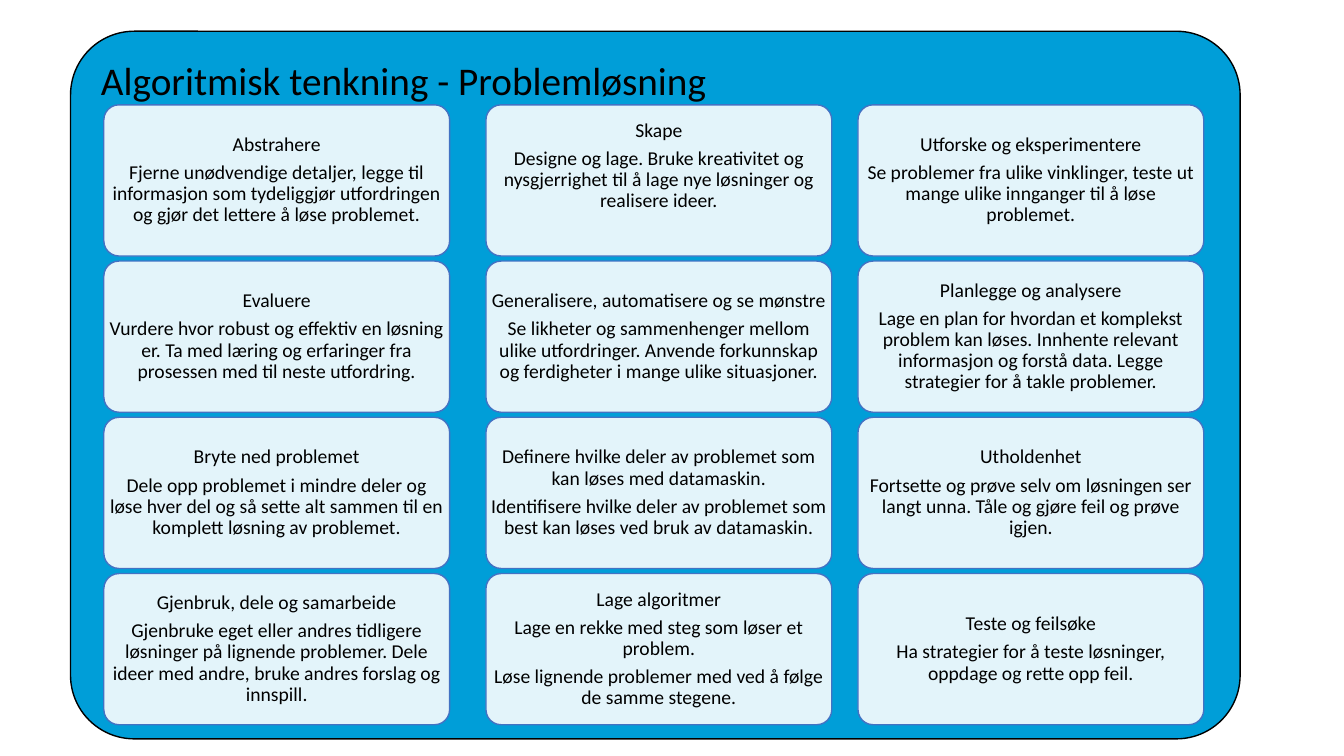
import pptx
import pptx.util
import pptx.dml.color
import pptx.enum.shapes
import pptx.enum.text
import lxml.etree

TITLE = "Algoritmisk tenkning - Problemløsning"
COLUMNS = [
    [
        ["Abstrahere",
         "Fjerne unødvendige detaljer, legge til informasjon som tydeliggjør utfordringen og gjør det lettere å løse problemet."],
        ["Evaluere",
         "Vurdere hvor robust og effektiv en løsning er. Ta med læring og erfaringer fra prosessen med til neste utfordring."],
        ["Bryte ned problemet",
         "Dele opp problemet i mindre deler og løse hver del og så sette alt sammen til en komplett løsning av problemet."],
        ["Gjenbruk, dele og samarbeide",
         "Gjenbruke eget eller andres tidligere løsninger på lignende problemer. Dele ideer med andre, bruke andres forslag og innspill."],
    ],
    [
        ["Skape",
         "Designe og lage. Bruke kreativitet og nysgjerrighet til å lage nye løsninger og realisere ideer."],
        ["Generalisere, automatisere og se mønstre",
         "Se likheter og sammenhenger mellom ulike utfordringer. Anvende forkunnskap og ferdigheter i mange ulike situasjoner."],
        ["Definere hvilke deler av problemet som kan løses med datamaskin.",
         "Identifisere hvilke deler av problemet som best kan løses ved bruk av datamaskin."],
        ["Lage algoritmer",
         "Lage en rekke med steg som løser et problem.",
         "Løse lignende problemer med ved å følge de samme stegene."],
    ],
    [
        ["Utforske og eksperimentere",
         "Se problemer fra ulike vinklinger, teste ut mange ulike innganger til å løse problemet."],
        ["Planlegge og analysere",
         "Lage en plan for hvordan et komplekst problem kan løses. Innhente relevant informasjon og forstå data. Legge strategier for å takle problemer."],
        ["Utholdenhet",
         "Fortsette og prøve selv om løsningen ser langt unna. Tåle og gjøre feil og prøve igjen."],
        ["Teste og feilsøke",
         "Ha strategier for å teste løsninger, oppdage og rette opp feil."],
    ],
]
EXTRA_BOTTOM = {"Skape": 0.28}

COLORS = {"panel": "009ED8", "card": "FFFFFF", "card_line": "4372C3", "text": "000000"}
FONT = "Calibri"
SLIDE_SIZE = (13.33, 7.5)
PANEL = (0.7, 0.31, 11.6, 7.02)
COLUMN_LEFTS = (1.03, 4.82, 8.51)
FIRST_ROW, ROW_PITCH = 1.04, 1.55
CARD_WIDTH, CARD_HEIGHT = 3.43, 1.5
CORNER_INSET = 0.29

Inches = pptx.util.Inches
Align = pptx.enum.text.PP_ALIGN
Anchor = pptx.enum.text.MSO_ANCHOR


def rgb(name):
    return pptx.dml.color.RGBColor.from_string(COLORS[name])


def add_rounded_box(slide, box, fill, line, corner, opacity=100):
    shape = slide.shapes.add_shape(
        pptx.enum.shapes.MSO_SHAPE.ROUNDED_RECTANGLE, *map(Inches, box))
    shape.shadow.inherit = False
    shape.adjustments[0] = corner
    shape.fill.solid()
    shape.fill.fore_color.rgb = rgb(fill)
    shape.line.color.rgb = rgb(line)
    shape.line.width = pptx.util.Pt(1)
    if opacity < 100:
        color = shape._element.spPr.find(pptx.oxml.ns.qn("a:solidFill"))[0]
        alpha = lxml.etree.SubElement(color, pptx.oxml.ns.qn("a:alpha"))
        alpha.set("val", str(opacity * 1000))
    return shape


def write_text(shape, lines, size, insets, align=Align.LEFT, anchor=Anchor.TOP, gap=0):
    frame = shape.text_frame
    frame.word_wrap = True
    frame.vertical_anchor = anchor
    corner = shape.adjustments[0] * shape.height.inches * CORNER_INSET
    left, top, right, bottom = [Inches(inset - corner) for inset in insets]
    frame.margin_left, frame.margin_top = left, top
    frame.margin_right, frame.margin_bottom = right, bottom
    for index, line in enumerate(lines):
        paragraph = frame.add_paragraph() if index else frame.paragraphs[0]
        paragraph.alignment = align
        paragraph.line_spacing = 0.9
        if index:
            paragraph.space_before = pptx.util.Pt(gap)
        run = paragraph.add_run()
        run.text = line
        run.font.name = FONT
        run.font.size = pptx.util.Pt(size)
        run.font.color.rgb = rgb("text")


def main():
    presentation = pptx.Presentation()
    presentation.slide_width, presentation.slide_height = map(Inches, SLIDE_SIZE)
    slide = presentation.slides.add_slide(presentation.slide_layouts[6])

    panel = add_rounded_box(slide, PANEL, "panel", "text", 0.09)
    write_text(panel, [TITLE], 28, (0.3, 0.3, 5.28, 0.3))

    for left, cards in zip(COLUMN_LEFTS, COLUMNS):
        for row, lines in enumerate(cards):
            box = (left, FIRST_ROW + row * ROW_PITCH, CARD_WIDTH, CARD_HEIGHT)
            card = add_rounded_box(slide, box, "card", "card_line", 0.1, opacity=89)
            bottom = 0.05 + EXTRA_BOTTOM.get(lines[0], 0)
            write_text(card, lines, 14, (0.05, 0.05, 0.05, bottom),
                       align=Align.CENTER, anchor=Anchor.MIDDLE, gap=4.9)

    presentation.save("out.pptx")


if __name__ == "__main__":
    main()
